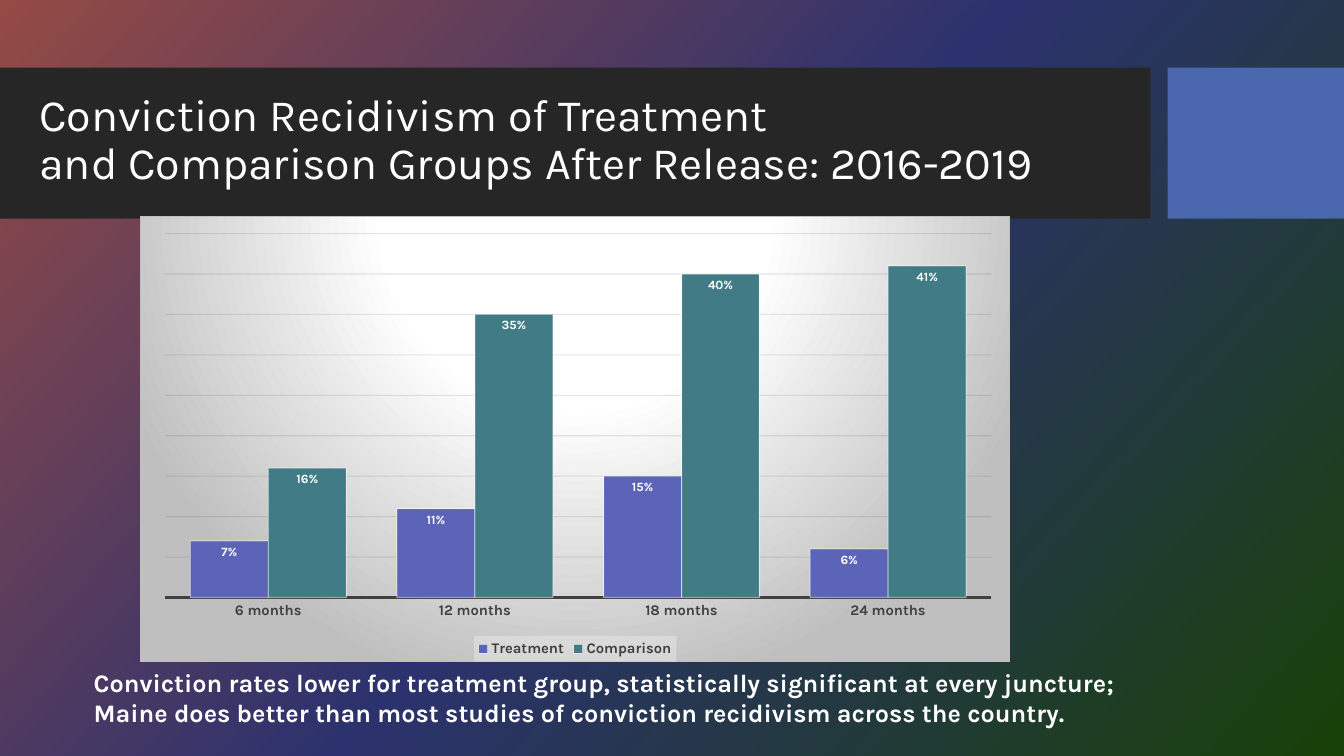
from lxml.etree import SubElement
from pptx import Presentation
from pptx.chart.data import CategoryChartData
from pptx.dml.color import RGBColor
from pptx.enum.chart import XL_CHART_TYPE, XL_LABEL_POSITION, XL_LEGEND_POSITION, XL_TICK_MARK
from pptx.enum.shapes import MSO_SHAPE
from pptx.enum.text import MSO_ANCHOR, MSO_AUTO_SIZE, PP_ALIGN
from pptx.oxml import parse_xml
from pptx.oxml.ns import nsdecls, qn
from pptx.util import Inches, Pt

FONT = "Karla"
TITLE = "Conviction Recidivism of Treatment\vand Comparison Groups After Release: 2016-2019"
TAKEAWAYS = [
    "Conviction rates lower for treatment group, statistically significant at every juncture;",
    "Maine does better than most studies of conviction recidivism across the country.",
]
PERIODS = ["6 months", "12 months", "18 months", "24 months"]
GROUPS = [
    ("Treatment", "5C64B7", [0.07, 0.11, 0.15, 0.06]),
    ("Comparison", "417B85", [0.16, 0.35, 0.40, 0.41]),
]
BANNER = [((0, 0.67, 11.41, 1.5), "262626"), ((11.58, 0.67, 1.75, 1.5), "4A66AC")]
BACKGROUND = [(0, "954A45"), (50, "2C326E"), (100, "184108")]
CHART_GLOW = [(0, "FFFFFF"), (39, "FFFFFF"), (100, "BFBFBF")]
PLOT = {"x": 0.028, "y": 0.039, "w": 0.951, "h": 0.817}


def rgb(value):
    return RGBColor.from_string(value)


def box(*lengths):
    return [Inches(v) for v in lengths]


def style(font, size, color, bold=False):
    font.name, font.size, font.bold = FONT, Pt(size), bold
    font.color.rgb = rgb(color)


def gradient(stops, shade):
    """Return a gradFill element; shade is the XML of its direction."""
    gs = "".join(f'<a:gs pos="{pos * 1000}"><a:srgbClr val="{c}"/></a:gs>' for pos, c in stops)
    return parse_xml(f'<a:gradFill {nsdecls("a")} rotWithShape="1">'
                     f"<a:gsLst>{gs}</a:gsLst>{shade}</a:gradFill>")


def line(fmt, color, width, alpha=100):
    fmt.line.color.rgb = rgb(color)
    fmt.line.width = Pt(width)
    if alpha < 100:
        clr = fmt.line._ln.find(".//" + qn("a:srgbClr"))
        SubElement(clr, qn("a:alpha"), val=str(alpha * 1000))


def set_background(s):
    s.background.fill.gradient()
    old = s._element.find(".//" + qn("p:bgPr")).find(qn("a:gradFill"))
    old.getparent().replace(old, gradient(BACKGROUND, '<a:lin ang="2520000" scaled="0"/>'))


def add_banner(s):
    for place, color in BANNER:
        sp = s.shapes.add_shape(MSO_SHAPE.RECTANGLE, *box(*place))
        sp.shadow.inherit = False
        sp.fill.solid()
        sp.fill.fore_color.rgb = rgb(color)
        sp.line.fill.background()


def set_title(s):
    title = s.shapes.title
    s.shapes._spTree.append(title._element)  # in front of the banner
    title.left, title.top, title.width, title.height = box(0.29, 0.81, 12.32, 1.18)
    tf = title.text_frame
    tf.text = TITLE
    tf.auto_size = MSO_AUTO_SIZE.NONE
    tf.vertical_anchor = MSO_ANCHOR.MIDDLE
    p = tf.paragraphs[0]
    p.alignment = PP_ALIGN.LEFT
    p.line_spacing = 0.9
    style(p.font, 32, "FFFFFF")


def add_takeaways(s):
    tf = s.shapes.add_textbox(*box(0.83, 6.57, 12.32, 1.01)).text_frame
    tf.word_wrap = True
    tf.text = "\n".join(TAKEAWAYS)
    for p in tf.paragraphs:
        style(p.font, 18, "FFFFFF", True)


def frame_chart(chart):
    """Give the chart its glow, border, legend panel and fixed plot area."""
    panel = parse_xml(f'<c:spPr {nsdecls("c", "a")}><a:ln w="9525"><a:solidFill>'
                      '<a:srgbClr val="BFBFBF"/></a:solidFill></a:ln></c:spPr>')
    panel.insert(0, gradient(CHART_GLOW, '<a:path path="circle"><a:fillToRect l="50000" '
                             't="-80000" r="50000" b="180000"/></a:path>'))
    space = chart._chartSpace
    space.find(qn("c:chart")).addnext(panel)

    legend = space.find(".//" + qn("c:legend"))
    legend.find(qn("c:overlay")).addnext(parse_xml(
        f'<c:spPr {nsdecls("c", "a")}><a:solidFill><a:srgbClr val="F2F2F2">'
        '<a:alpha val="39000"/></a:srgbClr></a:solidFill></c:spPr>'))

    plot_area = space.find(".//" + qn("c:plotArea"))
    for old in plot_area.findall(qn("c:layout")):
        plot_area.remove(old)
    sizes = "".join(f'<c:{k} val="{v}"/>' for k, v in PLOT.items())
    plot_area.insert(0, parse_xml(
        f'<c:layout {nsdecls("c")}><c:manualLayout><c:layoutTarget val="inner"/>'
        f'<c:xMode val="edge"/><c:yMode val="edge"/>{sizes}</c:manualLayout></c:layout>'))


def add_rates_chart(s):
    data = CategoryChartData(number_format="0%")
    data.categories = PERIODS
    for name, _, rates in GROUPS:
        data.add_series(name, rates)
    chart = s.shapes.add_chart(XL_CHART_TYPE.COLUMN_CLUSTERED,
                               *box(1.39, 2.14, 8.63, 4.43), data).chart
    style(chart.font, 10, "FFFFFF")
    chart.has_title = False
    chart.has_legend = True
    chart.legend.position = XL_LEGEND_POSITION.BOTTOM
    chart.legend.include_in_layout = False
    style(chart.legend.font, 10.5, "404040", True)

    months = chart.category_axis
    months.major_tick_mark = XL_TICK_MARK.NONE
    style(months.tick_labels.font, 10.5, "404040", True)
    line(months.format, "404040", 1.5)

    rate = chart.value_axis
    rate.visible = False
    rate.minimum_scale, rate.maximum_scale, rate.major_unit = 0, 0.45, 0.05
    line(rate.major_gridlines.format, "0D0D0D", 0.75, 10)

    plot = chart.plots[0]
    plot.gap_width, plot.overlap, plot.vary_by_categories = 65, 0, False
    for series, (_, color, _) in zip(plot.series, GROUPS):
        series.format.fill.solid()
        series.format.fill.fore_color.rgb = rgb(color)
        line(series.format, "FFFFFF", 0.75, 50)
        labels = series.data_labels
        labels.show_value = True
        labels.number_format, labels.number_format_is_linked = "0%", False
        labels.position = XL_LABEL_POSITION.INSIDE_END
        style(labels.font, 9, "FFFFFF", True)
    frame_chart(chart)


def main():
    prs = Presentation()
    prs.slide_width, prs.slide_height = box(13.33, 7.5)
    s = prs.slides.add_slide(prs.slide_layouts[5])
    set_background(s)
    add_banner(s)
    set_title(s)
    add_takeaways(s)
    add_rates_chart(s)
    prs.save("out.pptx")


if __name__ == "__main__":
    main()
